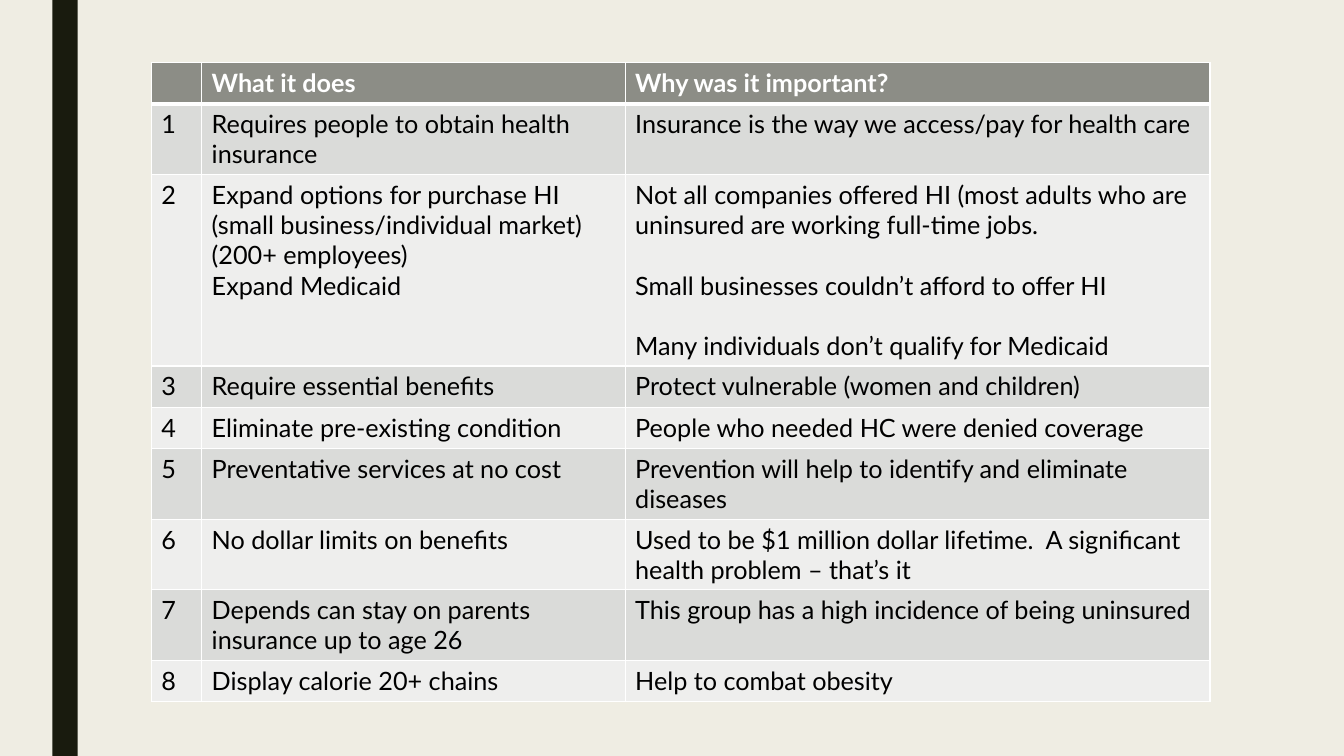
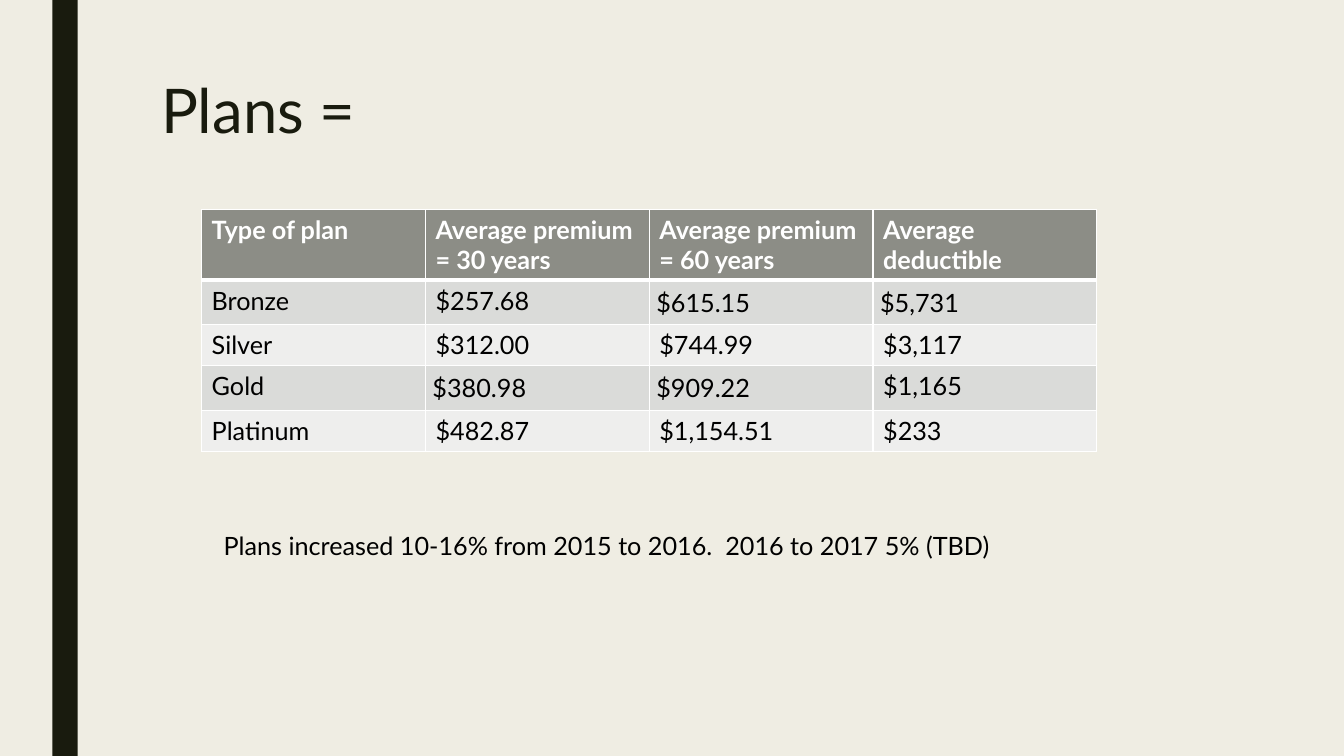
from dataclasses import dataclass

from lxml import etree
from pptx import Presentation
from pptx.dml.color import RGBColor
from pptx.enum import shapes, text
from pptx.oxml import ns
from pptx.util import Inches, Pt


@dataclass(frozen=True)
class Theme:
    font: str = "Lato"
    background: str = "EFEDE3"
    dark: str = "191B0E"
    header: str = "8C8D86"
    odd_row: str = "DADBD9"
    even_row: str = "EEEEED"
    white: str = "FFFFFF"
    black: str = "000000"
    title_size: int = 44
    body_size: int = 18
    thin_line: int = 1
    thick_line: int = 3
    row_height: float = 0.41
    blank_line: float = 21.6


THEME = Theme()

REFORMS = [
    ["", "What it does", "Why was it important?"],
    ["1", "Requires people to obtain health insurance",
     "Insurance is the way we access/pay for health care"],
    ["2", "Expand options for purchase HI\n(small business/individual market)\n"
          "(200+ employees)\nExpand Medicaid",
     "Not all companies offered HI (most adults who are uninsured are working full-time jobs.\n"
     "Small businesses couldn’t afford to offer HI\n"
     "Many individuals don’t qualify for Medicaid"],
    ["3", "Require essential benefits", "Protect vulnerable (women and children)"],
    ["4", "Eliminate pre-existing condition", "People who needed HC were denied coverage"],
    ["5", "Preventative services at no cost",
     "Prevention will help to identify and eliminate diseases"],
    ["6", "No dollar limits on benefits",
     "Used to be $1 million dollar lifetime.  A significant health problem – that’s it"],
    ["7", "Depends can stay on parents insurance up to age 26",
     "This group has a high incidence of being uninsured"],
    ["8", "Display calorie 20+ chains", "Help to combat obesity"],
]
SPACED_REASONS = (2, 2)

PLANS = [
    ["Type of plan", "Average premium = 30 years", "Average premium = 60 years",
     "Average deductible"],
    ["Bronze", "$257.68", "$615.15", "$5,731"],
    ["Silver", "$312.00", "$744.99", "$3,117"],
    ["Gold", "$380.98", "$909.22", "$1,165"],
    ["Platinum", "$482.87", "$1,154.51", "$233"],
]
EVEN_MARGIN_CELLS = [(1, 2), (1, 3), (3, 1), (3, 2)]


def rgb(colour):
    return RGBColor.from_string(colour)


def style_text(frame, size, colour, bold=False):
    for para in frame.paragraphs:
        for span in para.runs:
            span.font.name = THEME.font
            span.font.size = Pt(size)
            span.font.bold = bold
            span.font.color.rgb = rgb(colour)


def add_page(deck):
    """Add a blank slide with the shared background and side band."""
    page = deck.slides.add_slide(deck.slide_layouts[6])
    page.background.fill.solid()
    page.background.fill.fore_color.rgb = rgb(THEME.background)
    band = page.shapes.add_shape(shapes.MSO_SHAPE.RECTANGLE, Inches(0.52), 0,
                                 Inches(0.25), deck.slide_height)
    band.shadow.inherit = False
    band.fill.solid()
    band.fill.fore_color.rgb = rgb(THEME.dark)
    band.line.fill.background()
    return page


def add_text(page, box, words, size, colour):
    frame = page.shapes.add_textbox(*map(Inches, box)).text_frame
    frame.word_wrap = True
    frame.vertical_anchor = text.MSO_ANCHOR.TOP
    frame.text = words
    style_text(frame, size, colour)
    return frame


def add_borders(cell, top, bottom):
    properties = cell._tc.get_or_add_tcPr()
    widths = {"L": THEME.thin_line, "R": THEME.thin_line, "T": top, "B": bottom}
    for side, width in widths.items():
        line = etree.SubElement(properties, ns.qn(f"a:ln{side}"), w=str(Pt(width)))
        fill = etree.SubElement(line, ns.qn("a:solidFill"))
        etree.SubElement(fill, ns.qn("a:srgbClr"), val=THEME.white)


def style_cell(cell, row):
    is_header = row == 0
    add_borders(cell, THEME.thick_line if row == 1 else THEME.thin_line,
                THEME.thick_line if is_header else THEME.thin_line)
    stripe = THEME.odd_row if row % 2 else THEME.even_row
    cell.fill.solid()
    cell.fill.fore_color.rgb = rgb(THEME.header if is_header else stripe)
    style_text(cell.text_frame, THEME.body_size,
               THEME.white if is_header else THEME.black, is_header)


def add_grid(page, left, top, widths, rows):
    """Add a striped table whose rows grow with their text."""
    table = page.shapes.add_table(
        len(rows), len(widths), Inches(left), Inches(top),
        Inches(sum(widths)), Inches(THEME.row_height * len(rows))).table
    for column, width in zip(table.columns, widths):
        column.width = Inches(width)
    for row, values in enumerate(rows):
        table.rows[row].height = Inches(THEME.row_height)
        for column, words in enumerate(values):
            cell = table.cell(row, column)
            cell.text_frame.text = words
            style_cell(cell, row)
    return table


def add_reforms_page(deck):
    page = add_page(deck)
    table = add_grid(page, 1.5, 0.62, [0.5, 4.2, 5.8], REFORMS)
    for para in table.cell(*SPACED_REASONS).text_frame.paragraphs[1:]:
        para.space_before = Pt(THEME.blank_line)


def add_plans_page(deck):
    page = add_page(deck)
    title = add_text(page, (1.5, 0.75, 10.5, 1.62), "Plans =",
                     THEME.title_size, THEME.dark)
    title.paragraphs[0].line_spacing = 0.89
    table = add_grid(page, 2, 2.08, [2.22] * 4, PLANS)
    for position in EVEN_MARGIN_CELLS:
        cell = table.cell(*position)
        cell.margin_left = cell.margin_right = Inches(0.07)
        cell.margin_top = cell.margin_bottom = Inches(0.07)
    add_text(page, (2.12, 5.21, 9.88, 0.4),
             "Plans increased 10-16% from 2015 to 2016.  2016 to 2017 5% (TBD)",
             THEME.body_size, THEME.black)


def main():
    deck = Presentation()
    deck.slide_width, deck.slide_height = Inches(13.33), Inches(7.5)
    add_reforms_page(deck)
    add_plans_page(deck)
    deck.save("out.pptx")


if __name__ == "__main__":
    main()
